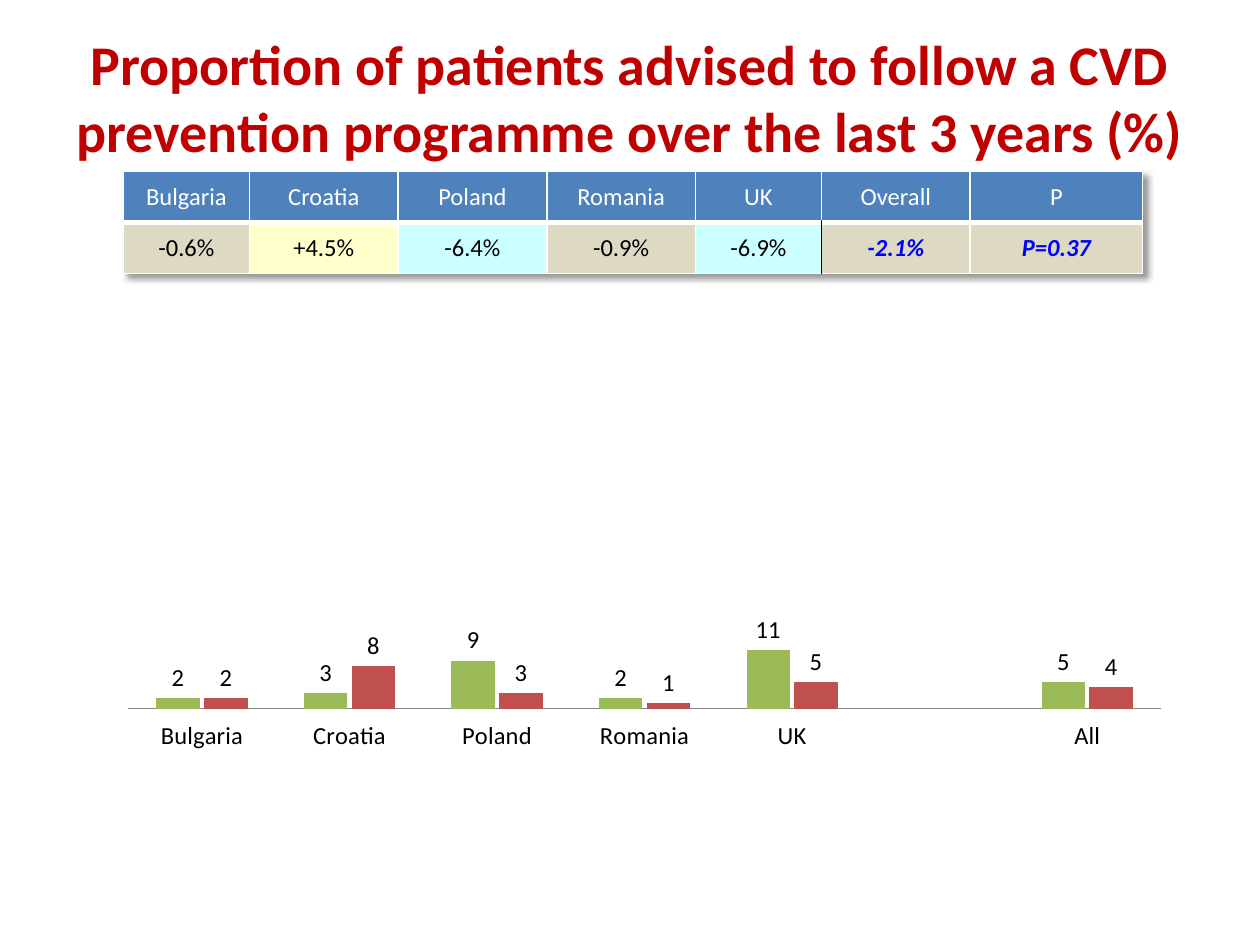
from lxml import etree
from pptx import Presentation
from pptx.chart.data import CategoryChartData
from pptx.dml.color import RGBColor
from pptx.enum.chart import XL_CHART_TYPE, XL_LABEL_POSITION, XL_TICK_LABEL_POSITION, XL_TICK_MARK
from pptx.enum.text import MSO_ANCHOR, PP_ALIGN
from pptx.oxml import parse_xml
from pptx.oxml.ns import nsdecls, qn
from pptx.util import Inches, Pt

FONT = "Calibri"
SAND, CREAM, AQUA = "DDD9C3", "FFFFCC", "CCFFFF"
COLUMNS = [
    ("Bulgaria", 1, "-0.6%", SAND),
    ("Croatia", 1.18, "+4.5%", CREAM),
    ("Poland", 1.18, "-6.4%", AQUA),
    ("Romania", 1.18, "-0.9%", SAND),
    ("UK", 1, "-6.9%", AQUA),
    ("Overall", 1.18, "-2.1%", SAND),
    ("P", 1.37, "P=0.37", SAND),
]
SUMMARY_COL = 5
CATEGORIES = ["Bulgaria", "Croatia", "Poland", "Romania", "UK", "", "All"]
SERIES = [
    ("Series 1", [2, 3, 9, 2, 11, None, 5], "9BBB59", "0"),
    ("Series 2", [2, 8, 3, 1, 5, None, 4], "C0504D", "#,##0"),
]


def rgb(value):
    return RGBColor.from_string(value)


def style_font(font, size, color, bold=False, italic=False):
    font.name, font.size = FONT, Pt(size)
    font.bold, font.italic = bold, italic
    font.color.rgb = rgb(color)


def set_borders(cell, sides):
    tcPr = cell._tc.get_or_add_tcPr()
    for i, (side, (color, width)) in enumerate(sides.items()):
        tcPr.insert(i, parse_xml(
            f'<a:ln{side} {nsdecls("a")} w="{Pt(width)}"><a:solidFill>'
            f'<a:srgbClr val="{color}"/></a:solidFill></a:ln{side}>'))


def add_title(slide, box):
    tf = slide.shapes.add_textbox(*map(Inches, box)).text_frame
    tf.word_wrap = True
    tf.vertical_anchor = MSO_ANCHOR.MIDDLE
    p = tf.paragraphs[0]
    p.text = "Proportion of patients advised to follow a CVD prevention programme over the last 3 years (%)"
    p.alignment = PP_ALIGN.CENTER
    style_font(p.runs[0].font, 32, "C00000", bold=True)


def fill_cell(cell, text, fill, color, emphasis, sides):
    cell.fill.solid()
    cell.fill.fore_color.rgb = rgb(fill)
    cell.vertical_anchor = MSO_ANCHOR.MIDDLE
    p = cell.text_frame.paragraphs[0]
    p.text = text
    p.alignment = PP_ALIGN.CENTER
    style_font(p.runs[0].font, 14, color, emphasis, emphasis)
    set_borders(cell, sides)


def add_change_table(slide, box):
    table = slide.shapes.add_table(2, len(COLUMNS), *map(Inches, box)).table
    tblPr = table._tbl.tblPr
    tblPr.insert(0, parse_xml(
        f'<a:effectLst {nsdecls("a")}><a:outerShdw blurRad="50800" dist="38100" dir="2700000" '
        'algn="tl" rotWithShape="0"><a:srgbClr val="000000"><a:alpha val="40000"/>'
        '</a:srgbClr></a:outerShdw></a:effectLst>'))
    for row in table.rows:
        row.height = Inches(box[3] / 2)
    white, black, thick = ("FFFFFF", 1), ("000000", 1), ("FFFFFF", 3)
    for c, (name, width, change, fill) in enumerate(COLUMNS):
        table.columns[c].width = Inches(width)
        sides = dict(L=white, R=white, T=white, B=thick)
        fill_cell(table.cell(0, c), name, "4F81BD", "FFFFFF", False, sides)
        summary = c >= SUMMARY_COL
        sides = dict(L=black if c == SUMMARY_COL else white,
                     R=black if c == SUMMARY_COL - 1 else white, T=thick, B=white)
        cell = table.cell(1, c)
        cell.margin_left = cell.margin_right = cell.margin_top = Inches(0.01)
        cell.margin_bottom = 0
        fill_cell(cell, change, fill, "0000FF" if summary else "000000", summary, sides)


def set_plot_layout(chart, x, y, w, h):
    plot_area = chart._chartSpace.chart.plotArea
    for old in plot_area.findall(qn("c:layout")):
        plot_area.remove(old)
    layout = etree.Element(qn("c:layout"))
    manual = etree.SubElement(layout, qn("c:manualLayout"))
    for tag, val in (("layoutTarget", "inner"), ("xMode", "edge"), ("yMode", "edge"),
                     ("x", x), ("y", y), ("w", w), ("h", h)):
        etree.SubElement(manual, qn(f"c:{tag}")).set("val", str(val))
    plot_area.insert(0, layout)


def add_advice_chart(slide, box):
    data = CategoryChartData()
    data.categories = CATEGORIES
    for name, values, _, _ in SERIES:
        data.add_series(name, values)
    chart = slide.shapes.add_chart(XL_CHART_TYPE.COLUMN_CLUSTERED, *map(Inches, box), data).chart
    chart.has_legend = chart.has_title = False
    style_font(chart.font, 14, "000000")
    set_plot_layout(chart, 0.055, 0.038, 0.945, 0.858)
    plot = chart.plots[0]
    plot.gap_width, plot.overlap = 130, -10
    plot.vary_by_categories = False
    for s, (_, _, color, number_format) in zip(plot.series, SERIES):
        s.format.fill.solid()
        s.format.fill.fore_color.rgb = rgb(color)
        labels = s.data_labels
        labels.show_value = True
        labels.position = XL_LABEL_POSITION.OUTSIDE_END
        labels.number_format = number_format
        labels.number_format_is_linked = False
    axis = chart.category_axis
    axis.tick_label_position = XL_TICK_LABEL_POSITION.LOW
    axis.major_tick_mark = XL_TICK_MARK.NONE
    axis.format.line.color.rgb = rgb("868686")
    axis = chart.value_axis
    axis.minimum_scale, axis.maximum_scale, axis.major_unit = 0, 100, 10
    axis.has_major_gridlines = False
    axis.visible = False


def main():
    prs = Presentation()
    prs.slide_width, prs.slide_height = Inches(10), Inches(7.5)
    slide = prs.slides.add_slide(prs.slide_layouts[6])
    add_title(slide, (0.5, 0.3, 9, 0.93))
    add_advice_chart(slide, (0.54, 1.19, 8.68, 4.95))
    add_change_table(slide, (0.98, 1.36, 8.09, 0.81))
    prs.save("out.pptx")


if __name__ == "__main__":
    main()
